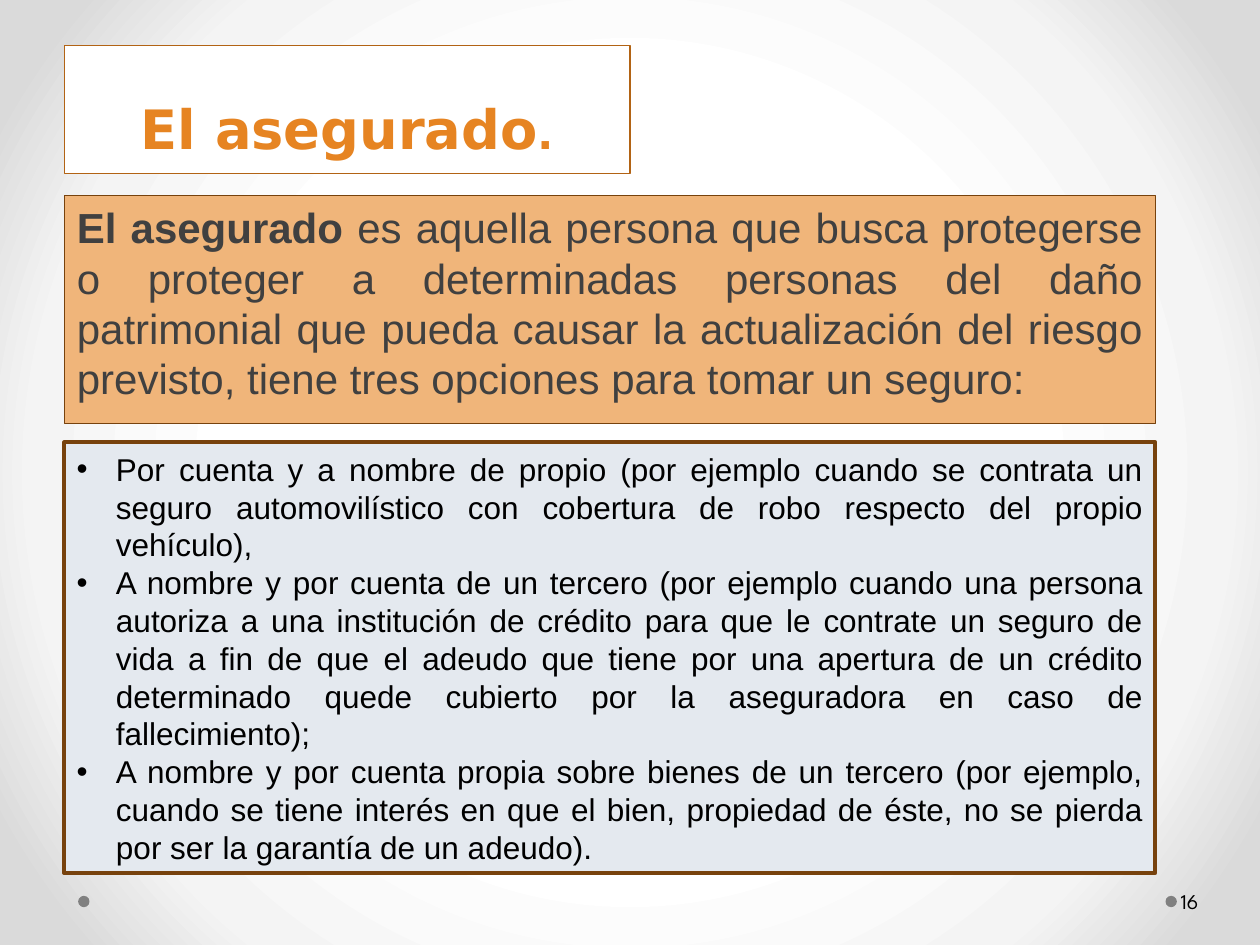
from pptx import Presentation
from pptx.dml.color import RGBColor
from pptx.enum.shapes import MSO_SHAPE
from pptx.enum.text import MSO_ANCHOR, MSO_AUTO_SIZE, PP_ALIGN
from pptx.oxml import parse_xml
from pptx.oxml.ns import nsdecls
from pptx.util import Pt
from lxml.etree import SubElement

COLORS = {
    "white": "FFFFFF", "pale": "F4F4F4", "edge": "DADADA", "dot": "808080",
    "orange": "E68422", "title_line": "B26314", "peach": "F0B57A",
    "brown": "77420D", "ice": "E4E9EF", "dark": "404040", "black": "000000",
}
LEFT, WIDTH = 36.72, 623.52


def style_box(box, place, fill, line=None, weight=0.75):
    for name, value in zip(("left", "top", "width", "height"), place):
        setattr(box, name, Pt(value))
    box.fill.solid()
    box.fill.fore_color.rgb = RGBColor.from_string(COLORS[fill])
    if line:
        box.line.color.rgb = RGBColor.from_string(COLORS[line])
        box.line.width = Pt(weight)
    else:
        box.line.fill.background()


def add_span(para, text, size, face, color, bold=False):
    span = para.add_run()
    span.text = text
    for name, value in {"size": Pt(size), "name": face, "bold": bold}.items():
        setattr(span.font, name, value)
    span.font.color.rgb = RGBColor.from_string(COLORS[color])


deck = Presentation()
deck.slide_width, deck.slide_height = Pt(720), Pt(540)
page = deck.slides.add_slide(deck.slide_layouts[1])

stops = "".join(
    f'<a:gs pos="{position * 1000}"><a:srgbClr val="{COLORS[color]}"/></a:gs>'
    for position, color in ((50, "white"), (76, "pale"), (92, "edge"))
)
page.element.cSld.insert(0, parse_xml(
    f'<p:bg {nsdecls("p", "a")}><p:bgPr><a:gradFill rotWithShape="1">'
    f'<a:gsLst>{stops}</a:gsLst><a:path path="circle">'
    '<a:fillToRect l="50000" t="50000" r="50000" b="50000"/></a:path>'
    '</a:gradFill><a:effectLst/></p:bgPr></p:bg>'
))

title = page.shapes.title
style_box(title, (LEFT, 25.92, 323.28, 73.44), "white", "title_line")
frame = title.text_frame
for name, value in {"vertical_anchor": MSO_ANCHOR.MIDDLE, "word_wrap": True,
                    "auto_size": MSO_AUTO_SIZE.NONE}.items():
    setattr(frame, name, value)
para = frame.paragraphs[0]
para.alignment = PP_ALIGN.CENTER
para.line_spacing = Pt(58)
for text, size in (("El asegurado", 31), (".", 24)):
    add_span(para, text, size, "DejaVu Sans", "orange", True)

definition = page.placeholders[1]
style_box(definition, (LEFT, 111.6, WIDTH, 130.32), "peach", "brown")
frame = definition.text_frame
for name, value in {"vertical_anchor": MSO_ANCHOR.TOP, "word_wrap": True,
                    "auto_size": MSO_AUTO_SIZE.NONE}.items():
    setattr(frame, name, value)
para = frame.paragraphs[0]
para.alignment = PP_ALIGN.JUSTIFY
para.space_before = Pt(4.8)
properties = para._p.get_or_add_pPr()
for name in ("marL", "indent"):
    properties.set(name, "0")
SubElement(properties, "{http://schemas.openxmlformats.org/drawingml/2006/main}buNone")
for text, bold in (
    ("El asegurado", True),
    (" es aquella persona que busca protegerse o proteger a determinadas personas "
     "del daño patrimonial que pueda causar la actualización del riesgo previsto, "
     "tiene tres opciones para tomar un seguro:", False),
):
    add_span(para, text, 24, "Arial", "dark", bold)

for left in (666, 44.64):
    dot = page.shapes.add_shape(MSO_SHAPE.OVAL, 0, 0, 0, 0)
    dot.shadow.inherit = False
    style_box(dot, (left, 511.92, 6.48, 6.48), "dot")

number = page.shapes.add_textbox(Pt(672.48), Pt(500.4), Pt(43.92), Pt(28.8))
frame = number.text_frame
for name, value in {"word_wrap": True, "vertical_anchor": MSO_ANCHOR.MIDDLE,
                    "margin_left": Pt(2.16), "margin_right": Pt(3.6)}.items():
    setattr(frame, name, value)
add_span(frame.paragraphs[0], "16", 12, "League Spartan", "black")

options = page.shapes.add_shape(MSO_SHAPE.RECTANGLE, 0, 0, 0, 0)
options.shadow.inherit = False
style_box(options, (LEFT, 252.72, WIDTH, 246.24), "ice", "brown", 2.25)
frame = options.text_frame
frame.word_wrap = True
frame.vertical_anchor = MSO_ANCHOR.MIDDLE
for index, text in enumerate((
    "Por cuenta y a nombre de propio (por ejemplo cuando se contrata un seguro "
    "automovilístico con cobertura de robo respecto del propio vehículo),",
    "A nombre y por cuenta de un tercero (por ejemplo cuando una persona autoriza "
    "a una institución de crédito para que le contrate un seguro de vida a fin de "
    "que el adeudo que tiene por una apertura de un crédito determinado quede "
    "cubierto por la aseguradora en caso de fallecimiento);",
    "A nombre y por cuenta propia sobre bienes de un tercero (por ejemplo, cuando "
    "se tiene interés en que el bien, propiedad de éste, no se pierda por ser la "
    "garantía de un adeudo).",
)):
    para = frame.add_paragraph() if index else frame.paragraphs[0]
    para.alignment = PP_ALIGN.JUSTIFY
    properties = para._p.get_or_add_pPr()
    properties.set("marL", str(Pt(22.5)))
    properties.set("indent", str(-Pt(22.5)))
    properties.append(parse_xml(f'<a:buFont {nsdecls("a")} typeface="Arial"/>'))
    properties.append(parse_xml(f'<a:buChar {nsdecls("a")} char="•"/>'))
    add_span(para, text, 18, "Arial", "black")

deck.save("out.pptx")
